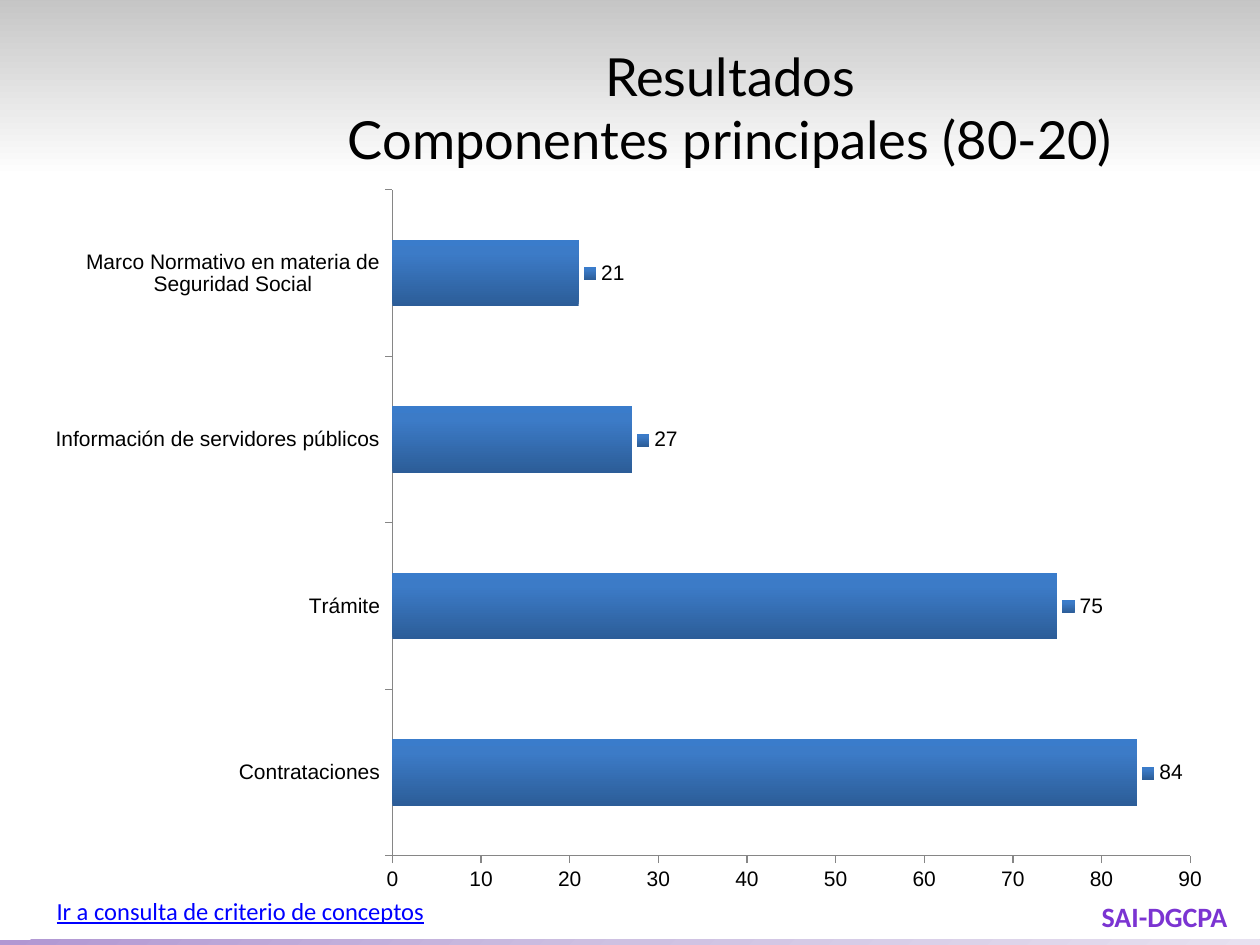
from copy import deepcopy

from pptx import Presentation
from pptx.chart.data import CategoryChartData
from pptx.dml.color import RGBColor
from pptx.enum.chart import XL_CHART_TYPE, XL_LABEL_POSITION, XL_TICK_MARK
from pptx.enum.shapes import MSO_SHAPE
from pptx.enum.text import MSO_ANCHOR, PP_ALIGN
from pptx.oxml import parse_xml
from pptx.oxml.ns import nsdecls, qn
from pptx.util import Inches, Pt

BAR = XL_CHART_TYPE.BAR_CLUSTERED
OUT_END = XL_LABEL_POSITION.OUTSIDE_END
TICK_OUT, TICK_NONE = XL_TICK_MARK.OUTSIDE, XL_TICK_MARK.NONE
RECT = MSO_SHAPE.RECTANGLE
TOP = MSO_ANCHOR.TOP
LEFT, CENTER, RIGHT = PP_ALIGN.LEFT, PP_ALIGN.CENTER, PP_ALIGN.RIGHT

BLACK = RGBColor(0x00, 0x00, 0x00)
WHITE = RGBColor(0xFF, 0xFF, 0xFF)
SILVER = RGBColor(0xC0, 0xC0, 0xC0)
GRAY = RGBColor(0x86, 0x86, 0x86)
LINK = RGBColor(0x00, 0x00, 0xFF)
PURPLE = RGBColor(0x7B, 0x34, 0xD2)
LILAC = RGBColor(0xB1, 0x97, 0xD2)
MAUVE = RGBColor(0xCE, 0xC1, 0xE2)
PALE = RGBColor(0xE7, 0xE1, 0xF0)
NAVY = RGBColor(0x2C, 0x5D, 0x98)
BLUE = RGBColor(0x3C, 0x7B, 0xC7)
SKY = RGBColor(0x3A, 0x7C, 0xCB)

TOTALS = {
    "Contrataciones": 84,
    "Trámite": 75,
    "Información de servidores públicos": 27,
    "Marco Normativo en materia de Seguridad Social": 21,
}
PLOT = {"x": 0.3, "y": 0.02, "w": 0.67, "h": 0.91}


def style(font, color, **values):
    for name, value in values.items():
        setattr(font, name, value)
    font.color.rgb = color


def blend(owner, fill, angle, stops):
    """Fill with a gradient of (position, colour) stops; angle is counter-clockwise."""
    fill.gradient()
    fill.gradient_angle = angle
    marks = next(owner.iter(qn("a:gsLst")))
    while len(marks) < len(stops):
        marks.append(deepcopy(marks[-1]))
    for mark, (place, color) in zip(fill.gradient_stops, stops):
        mark.position = place
        mark.color.rgb = color


def add_band(slide, box, angle, stops):
    band = slide.shapes.add_shape(RECT, *map(Inches, box))
    band.shadow.inherit = False
    band.line.fill.background()
    blend(band._element.spPr, band.fill, angle, stops)


def add_text(slide, box, lines, align, color, wrap=True, **font):
    frame = slide.shapes.add_textbox(*map(Inches, box)).text_frame
    frame.word_wrap = wrap
    frame.vertical_anchor = TOP
    frame.text = "\n".join(lines)
    for para in frame.paragraphs:
        para.alignment = align
        for run in para.runs:
            style(run.font, color, **font)


def place_plot(chart):
    """Pin the inner plot area to fractions of the chart."""
    area = next(chart._chartSpace.iter(qn("c:plotArea")))
    for old in area.findall(qn("c:layout")):
        area.remove(old)
    modes = "".join(f'<c:{key}Mode val="edge"/>' for key in "xy")
    sizes = "".join(f'<c:{key} val="{value}"/>' for key, value in PLOT.items())
    area.insert(0, parse_xml(
        f'<c:layout {nsdecls("c")}><c:manualLayout><c:layoutTarget val="inner"/>'
        f"{modes}{sizes}</c:manualLayout></c:layout>"))


def add_bars(slide, box):
    data = CategoryChartData()
    data.categories = list(TOTALS)
    data.add_series("Series 1", list(TOTALS.values()))
    chart = slide.shapes.add_chart(BAR, *map(Inches, box), data).chart
    chart.has_legend = chart.has_title = False
    style(chart.font, BLACK, name="Arial", size=Pt(12))

    for axis in (chart.category_axis, chart.value_axis):
        axis.has_major_gridlines = False
        axis.major_tick_mark = TICK_OUT
        axis.minor_tick_mark = TICK_NONE
        axis.format.line.color.rgb = GRAY
        axis.format.line.width = Pt(0.75)
    scale = {"minimum_scale": 0, "maximum_scale": 90, "major_unit": 10}
    for name, value in scale.items():
        setattr(chart.value_axis, name, value)

    plot = chart.plots[0]
    plot.gap_width = 150
    plot.vary_by_categories = False
    series = plot.series[0]
    blend(series._element, series.format.fill, 90,
          [(0, NAVY), (0.8, BLUE), (1, SKY)])
    labels = series.data_labels
    labels.show_value = labels.show_legend_key = True
    labels.position = OUT_END
    place_plot(chart)


def main():
    deck = Presentation()
    deck.slide_width, deck.slide_height = Inches(10), Inches(7.5)
    slide = deck.slides.add_slide(deck.slide_layouts[6])

    add_band(slide, (0, 7.46, 10, 0.08), 315,
             [(0, LILAC), (0.5, MAUVE), (1, PALE)])
    add_band(slide, (0, -0.14, 10, 1.55), 270, [(0, SILVER), (1, WHITE)])
    add_text(slide, (8.23, 7.09, 1.61, 0.37), ["SAI-DGCPA"], RIGHT, PURPLE,
             name="Calibri", size=Pt(16), bold=True)
    add_text(slide, (2.09, 0.3, 7.41, 0.95),
             ["Resultados", "Componentes principales (80-20)"], CENTER, BLACK,
             name="Lato", size=Pt(30))
    add_bars(slide, (0.28, 1.39, 9.45, 5.81))
    add_text(slide, (0.35, 7.06, 3.15, 0.34),
             ["Ir a consulta de criterio de conceptos"], LEFT, LINK, wrap=False,
             name="Calibri", size=Pt(14), underline=True)
    deck.save("out.pptx")


if __name__ == "__main__":
    main()
